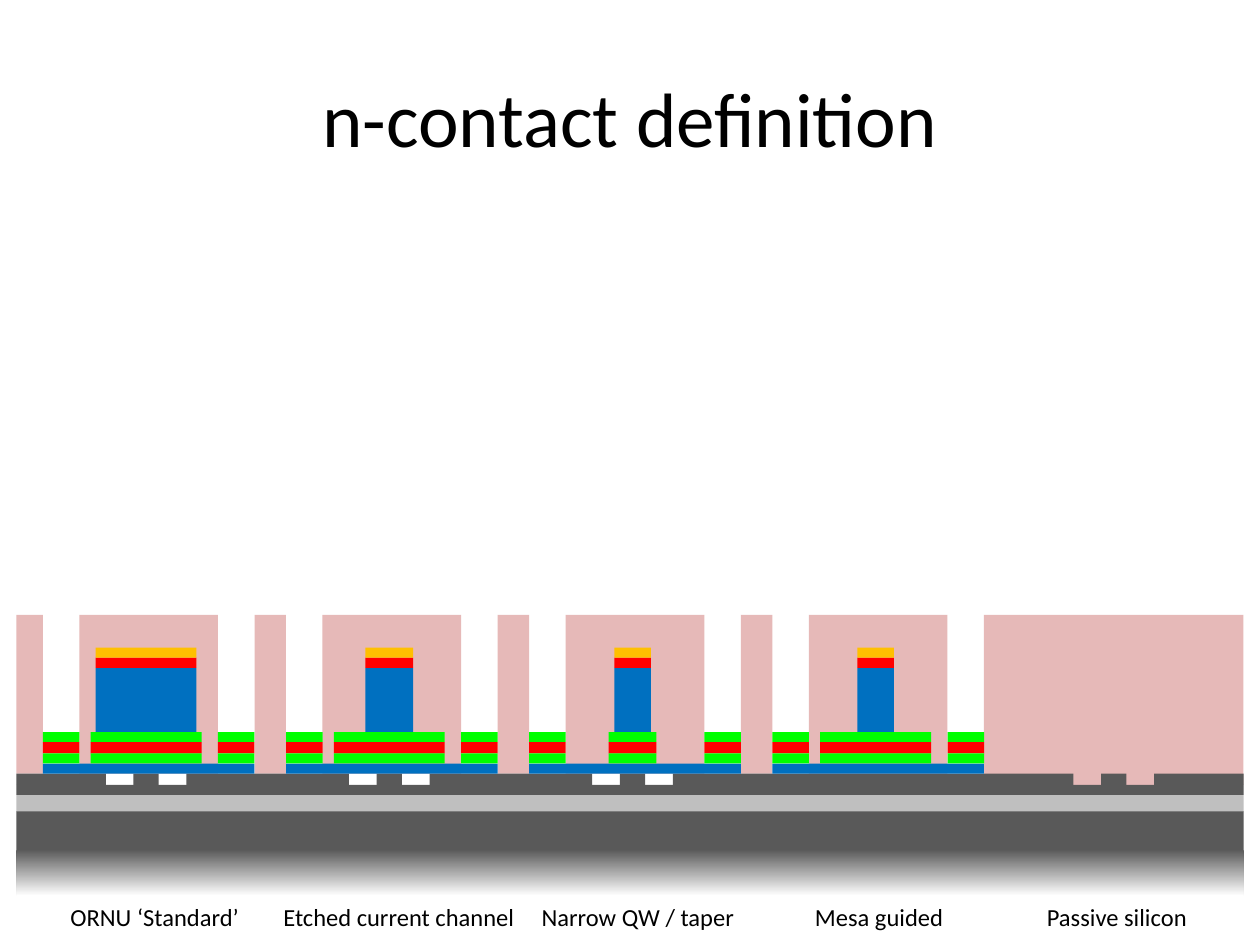
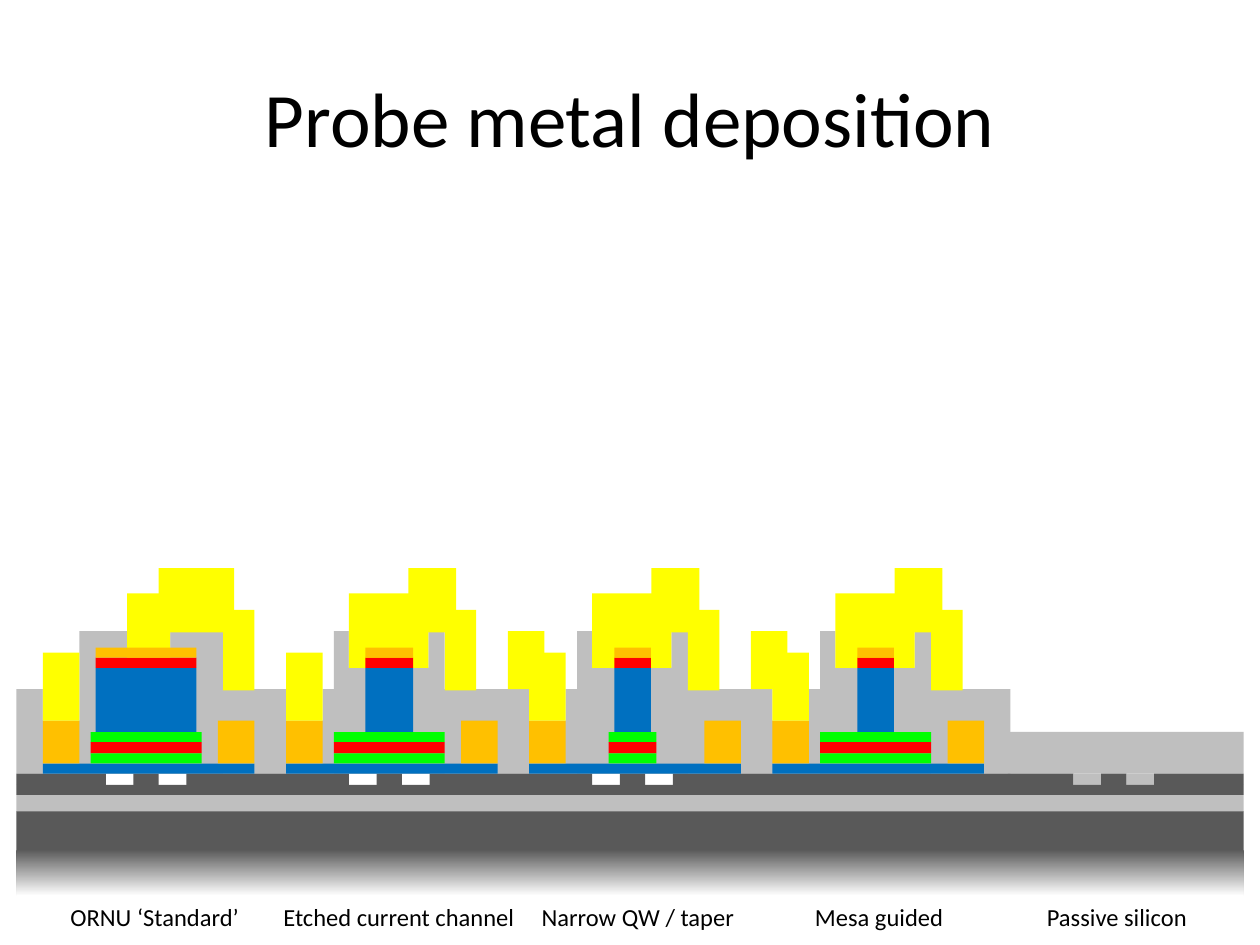
from dataclasses import dataclass

import pptx
import pptx.dml.color
import pptx.enum.shapes
import pptx.enum.text
import pptx.slide
import pptx.util
from pptx.util import Inches

FONT = "Calibri"
BLACK, WHITE = "000000", "FFFFFF"
SILICON, OXIDE = "595959", "BFBFBF"
BLUE, RED, GREEN = "0070C0", "FF0000", "00FF00"
CONTACT_METAL, PROBE_METAL, RESIST = "FFC000", "FFFF00", "E6B9B8"

# Wafer extent, device pitch and the widths shared by all devices
LEFT, RIGHT = 0.13, 9.87
FIRST_DEVICE, PITCH = 0.34, 1.93
MESA_WIDTH, PAD_WIDTH, AXIS = 1.68, 0.29, 0.82
RIB_HALF, TRENCH_EDGE = 0.1, 0.32
PASSIVE_AXIS = 8.84

# Heights of the layer boundaries, from the top down
CAP_TOP, CLADDING_TOP, RIDGE_TOP = 5.14, 5.22, 5.30
WELL_EDGES = (5.81, 5.89, 5.98, 6.06)
MESA_TOP, RIB_TOP, SLAB_TOP = 6.06, 6.14, 6.23
OXIDE_TOP, SUBSTRATE_TOP, SUBSTRATE_BOTTOM = 6.31, 6.44, 7.11
PAD_TOP, PAD_METAL_TOP, MASK_TOP = 5.72, 5.18, 4.63


@dataclass(frozen=True)
class Label:
    text: str
    left: float
    width: float


@dataclass(frozen=True)
class Device:
    """Cross-section of one device; offsets count from its left edge."""
    index: int
    well_width: float
    ridge_width: float
    hump: tuple[float, float] = (0.38, 1.26)
    window: tuple[float, float] = (0.50, 1.13)
    window_bottom: float = RIDGE_TOP
    crown_left: float = 0.97
    has_pad_step: bool = False

    @property
    def left(self) -> float:
        return FIRST_DEVICE + self.index * PITCH

    @property
    def right(self) -> float:
        return self.left + MESA_WIDTH

    @property
    def axis(self) -> float:
        return self.left + AXIS

    @property
    def pads(self) -> list[tuple[float, float]]:
        return [(self.left, self.left + PAD_WIDTH),
                (self.right - PAD_WIDTH, self.right)]

    def span(self, offsets: tuple[float, float]) -> tuple[float, float]:
        return self.left + offsets[0], self.left + offsets[1]

    def centred(self, width: float) -> tuple[float, float]:
        return self.axis - width / 2, self.axis + width / 2


LABELS = [
    Label("ORNU ‘Standard’", 0.46, 1.65),
    Label("Etched current channel", 2.15, 2.05),
    Label("Narrow QW / taper", 4.2, 1.74),
    Label("Mesa guided", 6.37, 1.23),
    Label("Passive silicon", 8.21, 1.32),
]
DEVICES = [
    Device(0, 0.88, 0.8, hump=(0.21, 1.43), window=(0.67, 1.01),
           window_bottom=CLADDING_TOP, crown_left=0.92),
    Device(1, 0.88, 0.38),
    Device(2, 0.38, 0.29, has_pad_step=True),
    Device(3, 0.88, 0.29, has_pad_step=True),
]


def rgb(value: str) -> pptx.dml.color.RGBColor:
    return pptx.dml.color.RGBColor.from_string(value)


def add_block(slide: pptx.slide.Slide, across: tuple[float, float],
              top: float, bottom: float, colour: str):
    """Draw a borderless rectangle from its left, right, top and bottom edges."""
    left, right = across
    block = slide.shapes.add_shape(
        pptx.enum.shapes.MSO_SHAPE.RECTANGLE, Inches(left), Inches(top),
        Inches(right - left), Inches(bottom - top))
    block.shadow.inherit = False
    block.line.fill.background()
    block.fill.solid()
    block.fill.fore_color.rgb = rgb(colour)
    return block


def add_text(slide: pptx.slide.Slide, text: str, left: float, top: float,
             width: float, height: float, size: float):
    box = slide.shapes.add_textbox(
        Inches(left), Inches(top), Inches(width), Inches(height))
    box.text_frame.text = text
    font = box.text_frame.paragraphs[0].runs[0].font
    font.name, font.size = FONT, pptx.util.Pt(size)
    font.color.rgb = rgb(BLACK)
    return box


def add_title(slide: pptx.slide.Slide, text: str) -> None:
    frame = add_text(slide, text, 0.5, 0.3, 9, 1.25, 44).text_frame
    frame.word_wrap = True
    frame.vertical_anchor = pptx.enum.text.MSO_ANCHOR.MIDDLE
    frame.paragraphs[0].alignment = pptx.enum.text.PP_ALIGN.CENTER


def add_labels(slide: pptx.slide.Slide) -> None:
    for label in LABELS:
        frame = add_text(slide, label.text, label.left, SUBSTRATE_BOTTOM,
                         label.width, 0.34, 14).text_frame
        frame.word_wrap = False
        frame.auto_size = pptx.enum.text.MSO_AUTO_SIZE.SHAPE_TO_FIT_TEXT


def add_wafer(slide: pptx.slide.Slide) -> None:
    """Draw the substrate, buried oxide and the silicon with its trenches."""
    wafer = (LEFT, RIGHT)
    substrate = add_block(slide, wafer, SUBSTRATE_TOP, SUBSTRATE_BOTTOM, SILICON)
    substrate.fill.gradient()
    substrate.fill.gradient_angle = 270
    stops = ((0.45, SILICON), (1, WHITE))
    for stop, (position, colour) in zip(substrate.fill.gradient_stops, stops):
        stop.position = position
        stop.color.rgb = rgb(colour)
    add_block(slide, wafer, OXIDE_TOP, SUBSTRATE_TOP, OXIDE)
    add_block(slide, wafer, SLAB_TOP, OXIDE_TOP, SILICON)

    rib_axes = [device.axis for device in DEVICES[:3]] + [PASSIVE_AXIS]
    slab_starts = [LEFT] + [axis + TRENCH_EDGE for axis in rib_axes]
    slab_ends = [axis - TRENCH_EDGE for axis in rib_axes] + [RIGHT]
    ribs = [(axis - RIB_HALF, axis + RIB_HALF) for axis in rib_axes]
    for across in ribs + list(zip(slab_starts, slab_ends)):
        add_block(slide, across, RIB_TOP, SLAB_TOP, SILICON)


def add_well(slide: pptx.slide.Slide, across: tuple[float, float]) -> None:
    for top, bottom, colour in zip(WELL_EDGES, WELL_EDGES[1:], (GREEN, RED, GREEN)):
        add_block(slide, across, top, bottom, colour)


def add_mesa(slide: pptx.slide.Slide, device: Device) -> None:
    add_block(slide, (device.left, device.right), MESA_TOP, RIB_TOP, BLUE)
    add_well(slide, device.centred(device.well_width))
    add_block(slide, device.centred(device.ridge_width), RIDGE_TOP, WELL_EDGES[0], BLUE)


def add_ridge_cap(slide: pptx.slide.Slide, device: Device) -> None:
    ridge = device.centred(device.ridge_width)
    add_block(slide, ridge, CLADDING_TOP, RIDGE_TOP, RED)
    add_block(slide, ridge, CAP_TOP, CLADDING_TOP, CONTACT_METAL)


def add_resist(slide: pptx.slide.Slide) -> None:
    """Cover everything with resist except the openings over the contact pads."""
    openings = [pad for device in DEVICES for pad in device.pads]
    starts = [LEFT] + [right for _, right in openings]
    ends = [left for left, _ in openings] + [RIGHT]
    for left, right in zip(starts, ends):
        bottom = SLAB_TOP if right == RIGHT else RIB_TOP
        add_block(slide, (left, right), 4.88, bottom, RESIST)


def add_cladding_oxide(slide: pptx.slide.Slide) -> None:
    """Draw the deposited oxide, then open its vias to the contacts."""
    add_block(slide, (8, RIGHT), 5.81, RIB_TOP, OXIDE)
    add_block(slide, (LEFT, 8.02), 5.47, RIB_TOP, OXIDE)
    for device in DEVICES:
        add_block(slide, device.span(device.hump), 5.01, RIB_TOP, OXIDE)
    for device in DEVICES:
        add_block(slide, device.pads[0], MASK_TOP, PAD_TOP, WHITE)
        add_block(slide, device.span(device.window), MASK_TOP,
                  device.window_bottom, WHITE)
    for side in (-1, 1):
        edges = sorted((PASSIVE_AXIS + side * RIB_HALF, PASSIVE_AXIS + side * TRENCH_EDGE))
        add_block(slide, (edges[0], edges[1]), RIB_TOP, SLAB_TOP, OXIDE)


def add_probe_metal(slide: pptx.slide.Slide, device: Device) -> None:
    hump_right = device.hump[1]
    add_block(slide, device.pads[0], PAD_METAL_TOP, PAD_TOP, PROBE_METAL)
    add_block(slide, device.span(device.window), 4.71, device.window_bottom, PROBE_METAL)
    add_block(slide, device.span((hump_right, hump_right + 0.25)), 4.84, 5.48, PROBE_METAL)
    add_block(slide, device.span((device.crown_left, hump_right + 0.09)),
              4.51, 5.02, PROBE_METAL)
    if device.has_pad_step:
        add_block(slide, device.span((-0.17, 0.12)), 5.01, 5.47, PROBE_METAL)


def add_n_contact_slide(deck) -> None:
    slide = deck.slides.add_slide(deck.slide_layouts[6])
    add_resist(slide)
    add_title(slide, "n-contact definition")
    add_wafer(slide)
    add_labels(slide)
    for device in DEVICES:
        add_mesa(slide, device)
        for pad in device.pads:
            add_well(slide, pad)
        add_ridge_cap(slide, device)


def add_probe_metal_slide(deck) -> None:
    slide = deck.slides.add_slide(deck.slide_layouts[6])
    add_cladding_oxide(slide)
    add_title(slide, "Probe metal deposition")
    add_wafer(slide)
    add_labels(slide)
    for device in DEVICES:
        add_mesa(slide, device)
        for pad in device.pads:
            add_block(slide, pad, PAD_TOP, MESA_TOP, CONTACT_METAL)
        add_probe_metal(slide, device)
        add_ridge_cap(slide, device)


def main() -> None:
    deck = pptx.Presentation()
    deck.slide_width, deck.slide_height = Inches(10), Inches(7.5)
    add_n_contact_slide(deck)
    add_probe_metal_slide(deck)
    deck.save("out.pptx")


if __name__ == "__main__":
    main()
